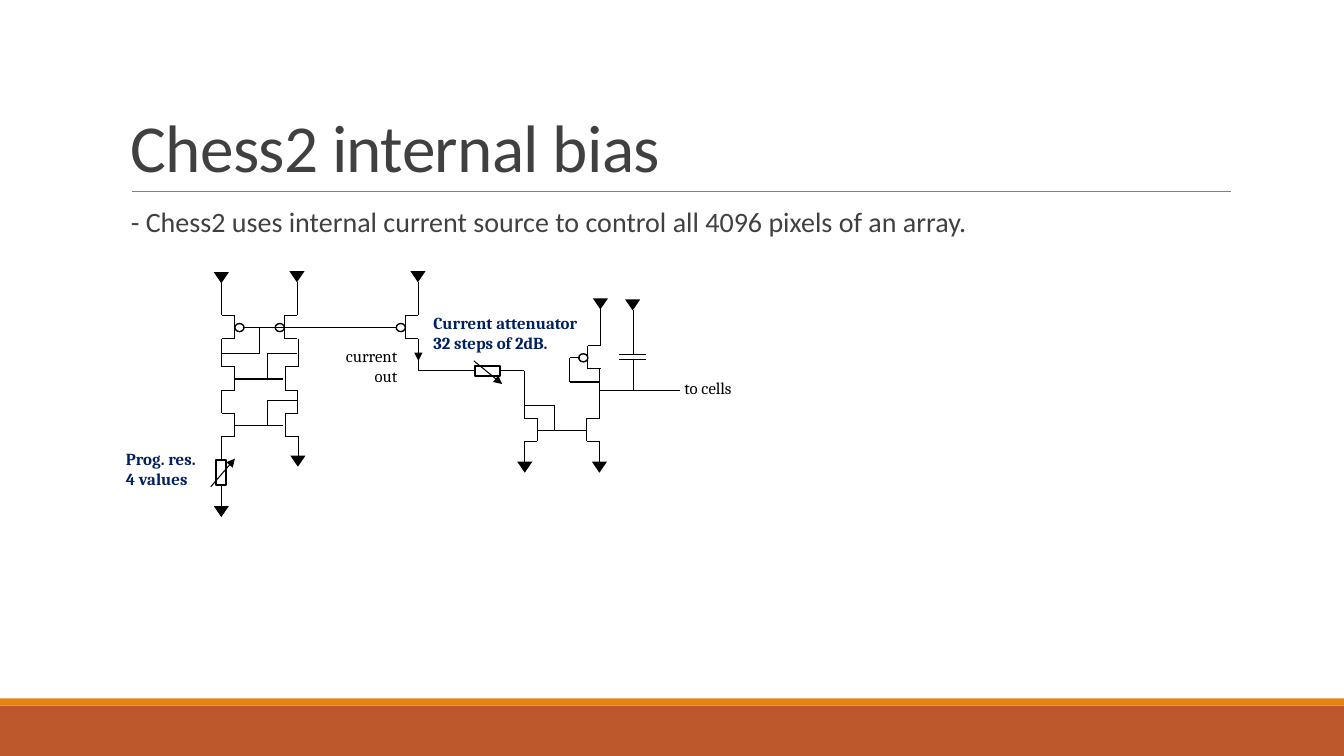
"""Builds the Chess2 internal bias slide with its current mirror schematic."""
from itertools import pairwise

from lxml import etree
from pptx import Presentation
from pptx.dml.color import RGBColor
from pptx.enum.shapes import MSO_CONNECTOR, MSO_SHAPE
from pptx.enum.text import MSO_ANCHOR, MSO_AUTO_SIZE, PP_ALIGN
from pptx.oxml.ns import qn
from pptx.util import Inches, Pt

STRAIGHT = MSO_CONNECTOR.STRAIGHT
RECTANGLE, OVAL = MSO_SHAPE.RECTANGLE, MSO_SHAPE.OVAL
SUPPLY_MARK = MSO_SHAPE.FLOWCHART_MERGE
TOP, BOTTOM = MSO_ANCHOR.TOP, MSO_ANCHOR.BOTTOM
LEFT, RIGHT = PP_ALIGN.LEFT, PP_ALIGN.RIGHT
GROW = MSO_AUTO_SIZE.SHAPE_TO_FIT_TEXT
BLACK, NAVY, GRAY = "000000", "002060", "404040"
GATE_HEIGHT = 0.23


def color(code):
    return RGBColor.from_string(code)


class Schematic:
    """Holds the style and the current slide, and draws circuit elements."""

    def __init__(self, page):
        self.page = page
        self.ink = BLACK
        self.wire_width = 0.75

    def shape(self, kind, left, top, width, height, fill=None, outline=None):
        item = self.page.shapes.add_shape(
            kind, Inches(left), Inches(top), Inches(width), Inches(height))
        item.shadow.inherit = False
        if fill:
            item.fill.solid()
            item.fill.fore_color.rgb = color(fill)
        else:
            item.fill.background()
        if outline:
            item.line.color.rgb = color(self.ink)
            item.line.width = Pt(outline)
        else:
            item.line.fill.background()
        return item

    def line(self, start, end, ink=None, width=None, arrow=False):
        item = self.page.shapes.add_connector(
            STRAIGHT, *(Inches(value) for value in (*start, *end)))
        item.line.color.rgb = color(ink or self.ink)
        item.line.width = Pt(width or self.wire_width)
        if arrow:
            tail = etree.SubElement(item.line._get_or_add_ln(), qn("a:tailEnd"))
            tail.set("type", "triangle")
        etree.SubElement(item._element.spPr, qn("a:effectLst"))
        return item

    def wire(self, *points):
        return [self.line(start, end) for start, end in pairwise(points)]

    def transistor(self, gate, channel, top, bubble=False):
        bottom = top + GATE_HEIGHT
        parts = self.wire((channel, top), (gate, top), (gate, bottom), (channel, bottom))
        if bubble:
            left = gate if gate > channel else gate - 0.09
            parts.append(self.shape(OVAL, left, top + 0.08, 0.09, 0.08, outline=1))
        self.page.shapes.add_group_shape(parts)

    def terminal(self, center, top):
        self.shape(SUPPLY_MARK, center - 0.08, top, 0.15, 0.11, fill=self.ink)

    def resistor(self, left, top, width, height):
        self.shape(RECTANGLE, left, top, width, height, outline=1.25)

    def text(self, words, left, top, width, height, size=12, font="Cambria", ink=BLACK,
             bold=False, align=LEFT, anchor=TOP, wrap=True, grow=True,
             line_spacing=None, tracking=None):
        box = self.page.shapes.add_textbox(
            Inches(left), Inches(top), Inches(width), Inches(height))
        frame = box.text_frame
        frame.text = words
        frame.word_wrap = wrap
        frame.vertical_anchor = anchor
        frame.auto_size = GROW if grow else MSO_AUTO_SIZE.NONE
        for para in frame.paragraphs:
            para.alignment = align
            if line_spacing:
                para.line_spacing = line_spacing
            for span in para.runs:
                span.font.size = Pt(size)
                span.font.name = font
                span.font.bold = bold
                span.font.color.rgb = color(ink)
                if tracking:
                    span.font._element.set("spc", str(tracking))


def draw_frame(art):
    art.shape(RECTANGLE, 0, 7, 13.33, 0.5, fill="BD582C")
    art.shape(RECTANGLE, 0, 6.93, 13.33, 0.07, fill="E48312")
    art.line((1.31, 1.9), (12.21, 1.9), ink="808080", width=0.5)
    art.text("Chess2 internal bias", 1.2, 0.31, 11, 1.59, size=48, font="Calibri",
             ink=GRAY, anchor=BOTTOM, grow=False, line_spacing=0.85, tracking=-50)
    art.text("- Chess2 uses internal current source to control all 4096 pixels of an array.",
             1.2, 2.02, 11, 4.4, size=20, font="Calibri", ink=GRAY, grow=False,
             line_spacing=0.9)


def draw_circuit(art):
    for gate, channel, top, bubble in (
            (2.33, 2.2, 3.13, True), (2.82, 2.95, 3.13, True), (4.02, 4.15, 3.13, True),
            (2.33, 2.2, 3.64, False), (2.83, 2.96, 3.64, False),
            (2.33, 2.2, 4.1, False), (2.83, 2.96, 4.1, False),
            (5.33, 5.2, 4.15, False), (5.82, 5.95, 4.15, False),
            (5.83, 5.96, 3.43, True)):
        art.transistor(gate, channel, top, bubble)

    for center, top in (
            (2.2, 2.7), (2.95, 2.69), (4.15, 2.69), (5.96, 2.96), (6.28, 2.97),
            (2.2, 5.02), (2.96, 4.52), (5.21, 4.58), (5.95, 4.58)):
        art.terminal(center, top)

    for points in (
            ((2.2, 2.81), (2.2, 3.13)), ((2.2, 3.36), (2.2, 3.64)),
            ((2.2, 3.87), (2.2, 4.1)), ((2.2, 4.33), (2.2, 4.56)),
            ((2.2, 4.81), (2.2, 5.07)),
            ((2.95, 2.8), (2.95, 3.13)), ((2.96, 3.36), (2.96, 3.64)),
            ((2.95, 3.87), (2.95, 4.1)), ((2.96, 4.33), (2.96, 4.58)),
            ((2.41, 3.25), (3.94, 3.25)), ((2.57, 3.25), (2.57, 3.51), (2.2, 3.51)),
            ((2.32, 3.76), (2.81, 3.76)), ((2.65, 3.76), (2.65, 3.51), (2.95, 3.51)),
            ((2.32, 4.22), (2.81, 4.22)), ((2.65, 4.22), (2.65, 3.97), (2.95, 3.97)),
            ((4.15, 2.8), (4.15, 3.13)), ((4.15, 3.36), (4.15, 3.68), (4.7, 3.68)),
            ((4.97, 3.68), (5.2, 3.68), (5.2, 4.15)), ((5.2, 4.38), (5.2, 4.63)),
            ((5.82, 4.27), (5.33, 4.27)), ((5.5, 4.27), (5.5, 4.02), (5.2, 4.02)),
            ((5.96, 3.07), (5.96, 3.43)), ((5.95, 3.66), (5.95, 4.15)),
            ((5.95, 4.38), (5.95, 4.61)),
            ((5.75, 3.55), (5.65, 3.55), (5.65, 3.79), (5.95, 3.79)),
            ((6.28, 3.08), (6.28, 3.52)), ((6.14, 3.52), (6.41, 3.52)),
            ((6.14, 3.57), (6.41, 3.57)), ((6.28, 3.57), (6.28, 3.87)),
            ((5.95, 3.87), (6.74, 3.87))):
        art.wire(*points)

    art.resistor(2.14, 4.56, 0.1, 0.25)
    art.resistor(4.71, 3.63, 0.25, 0.1)
    for start, end in (
            ((2.09, 4.83), (2.33, 4.55)), ((4.7, 3.58), (4.98, 3.81)),
            ((4.15, 3.43), (4.15, 3.58))):
        art.line(start, end, arrow=True)


def draw_labels(art):
    art.text("Prog. res.\v4 values", 1.15, 4.4, 0.92, 0.5, ink=NAVY, bold=True, wrap=False)
    art.text("current\nout", 3.3, 3.38, 0.74, 0.5, align=RIGHT, wrap=False)
    art.text("Current attenuator\n32 steps of 2dB.", 4.2, 3.05, 1.83, 0.5,
             ink=NAVY, bold=True)
    art.text("to cells", 6.69, 3.7, 1.83, 0.3)


def main():
    deck = Presentation()
    deck.slide_width, deck.slide_height = Inches(13.33), Inches(7.5)
    art = Schematic(deck.slides.add_slide(deck.slide_layouts[6]))
    draw_frame(art)
    draw_circuit(art)
    draw_labels(art)
    deck.save("out.pptx")


if __name__ == "__main__":
    main()
